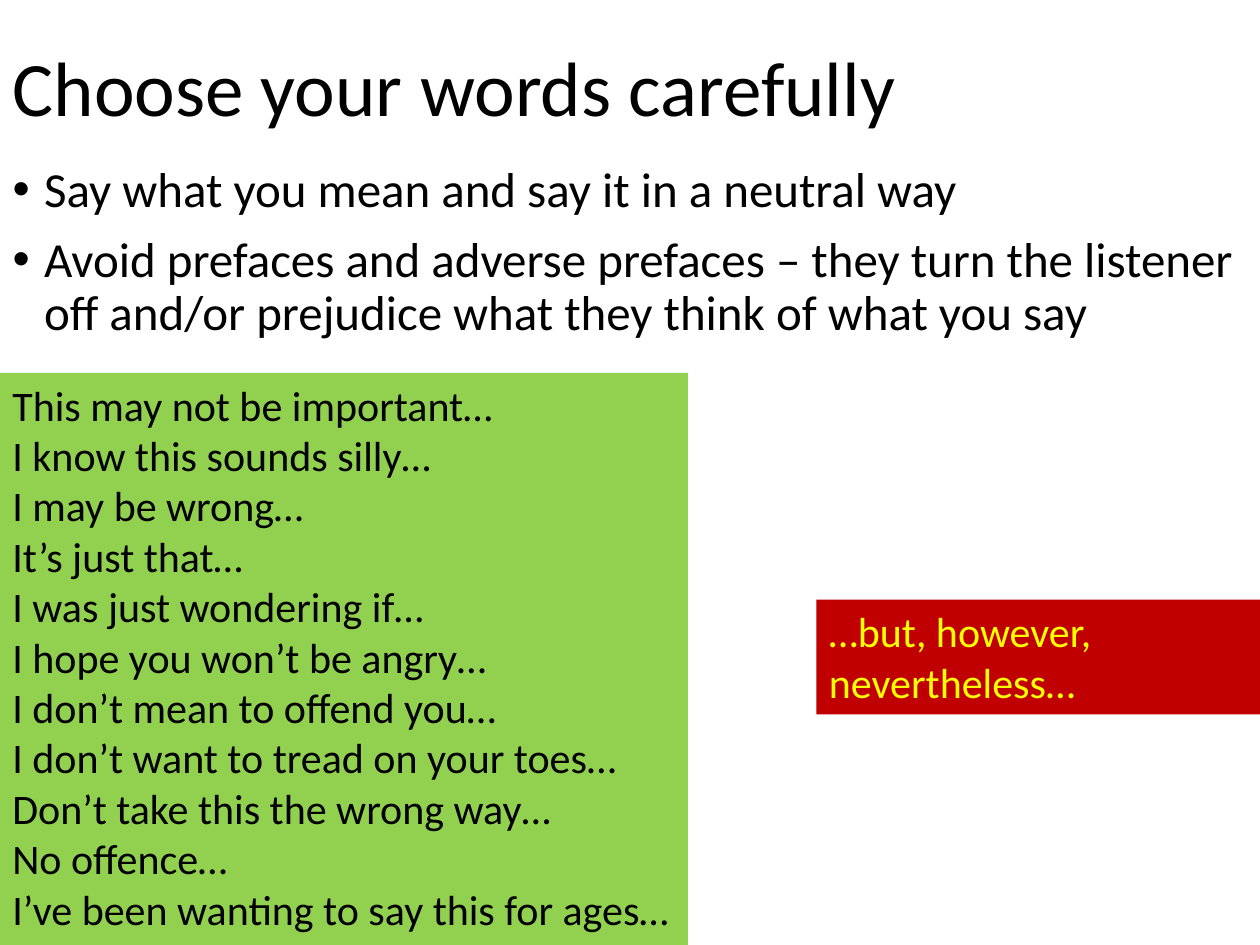
from pptx import Presentation
from pptx.dml.color import RGBColor
from pptx.enum.text import MSO_ANCHOR, MSO_AUTO_SIZE, PP_ALIGN
from pptx.util import Pt

BLACK = RGBColor(0x00, 0x00, 0x00)
GREEN = RGBColor(0x92, 0xD0, 0x50)
RED = RGBColor(0xC0, 0x00, 0x00)
YELLOW = RGBColor(0xFF, 0xFF, 0x00)

TITLE = ["Choose your words carefully"]
ADVICE = [
    "Say what you mean and say it in a neutral way",
    "Avoid prefaces and adverse prefaces – they turn the listener off "
    "and/or prejudice what they think of what you say",
]
PREFACES = [
    "This may not be important…",
    "I know this sounds silly…",
    "I may be wrong…",
    "It’s just that…",
    "I was just wondering if…",
    "I hope you won’t be angry…",
    "I don’t mean to offend you…",
    "I don’t want to tread on your toes…",
    "Don’t take this the wrong way…",
    "No offence…",
    "I’ve been wanting to say this for ages…",
]
CONTRASTS = ["…but, however, nevertheless…"]

# Left, top, width, height in points
TITLE_BOX = (0, 0, 828, 104.4)
ADVICE_BOX = (0, 90.72, 720, 386.64)
PANELS = [
    (PREFACES, (0, 213.12, 393.12, 326.88), GREEN, BLACK, False),
    (CONTRASTS, (466.56, 342.72, 253.44, 65.52), RED, YELLOW, True),
]
TITLE_FORMAT = {"alignment": PP_ALIGN.LEFT, "line_spacing": 0.9}
ADVICE_FORMAT = {"line_spacing": 0.9, "space_before": Pt(10)}
HANGING_INDENT = Pt(18)


def place(sp, box):
    for name, value in zip(("left", "top", "width", "height"), box):
        setattr(sp, name, Pt(value))


def write(tf, lines, size, color, formats):
    for i, line in enumerate(lines):
        p = tf.paragraphs[0] if i == 0 else tf.add_paragraph()
        for name, value in formats.items():
            setattr(p, name, value)
        r = p.add_run()
        r.text = line
        r.font.name = "Calibri"
        r.font.size = Pt(size)
        r.font.color.rgb = color


def add_panel(s, lines, box, fill, color, wrap):
    sp = s.shapes.add_textbox(*(Pt(v) for v in box))
    sp.fill.solid()
    sp.fill.fore_color.rgb = fill
    tf = sp.text_frame
    tf.word_wrap = wrap
    tf.auto_size = MSO_AUTO_SIZE.SHAPE_TO_FIT_TEXT
    write(tf, lines, 24, color, {})


def main():
    prs = Presentation()
    prs.slide_width, prs.slide_height = Pt(720), Pt(540)
    s = prs.slides.add_slide(prs.slide_layouts[1])

    title, body = s.shapes.title, s.placeholders[1]
    place(title, TITLE_BOX)
    title.text_frame.vertical_anchor = MSO_ANCHOR.MIDDLE
    write(title.text_frame, TITLE, 44, BLACK, TITLE_FORMAT)

    place(body, ADVICE_BOX)
    write(body.text_frame, ADVICE, 28, BLACK, ADVICE_FORMAT)
    for p in body.text_frame.paragraphs:
        pPr = p._p.get_or_add_pPr()
        pPr.set("marL", str(HANGING_INDENT))
        pPr.set("indent", str(-HANGING_INDENT))

    for sp in (title, body):
        sp.text_frame.auto_size = MSO_AUTO_SIZE.NONE

    for panel in PANELS:
        add_panel(s, *panel)

    prs.save("out.pptx")


if __name__ == "__main__":
    main()
